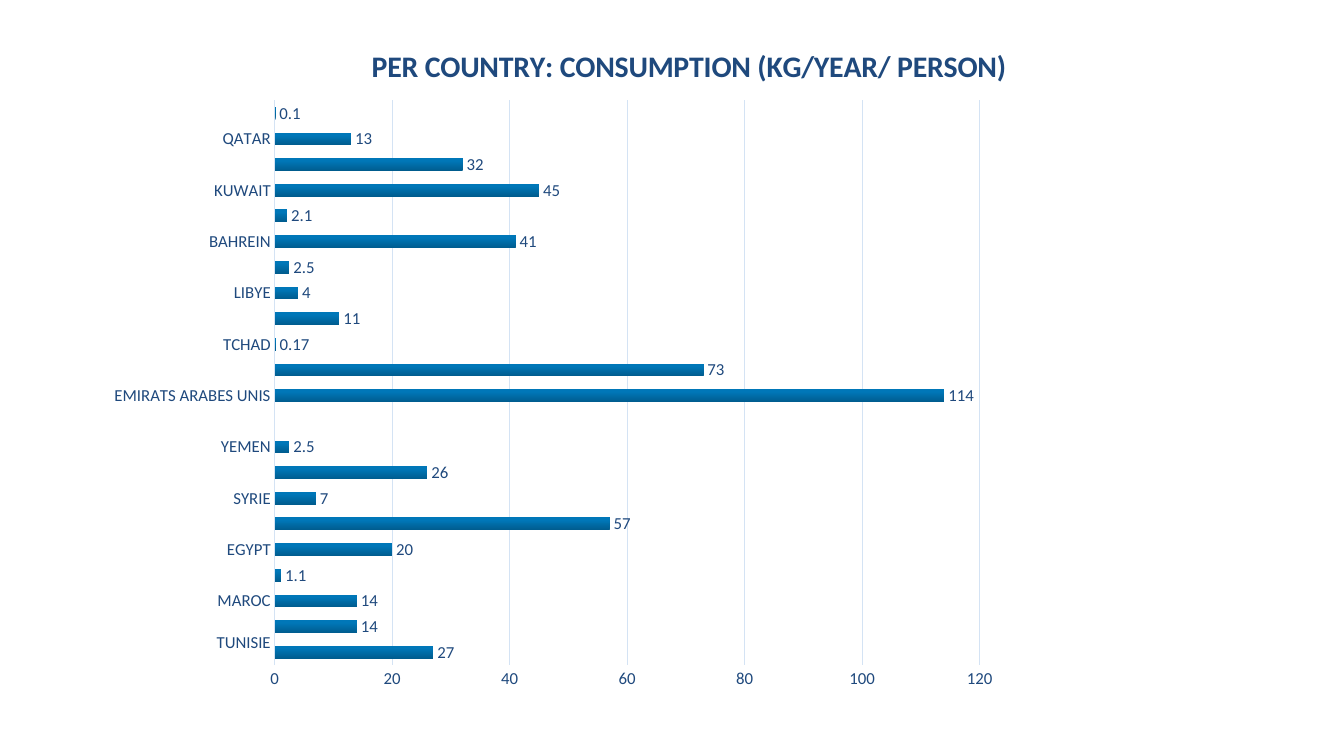
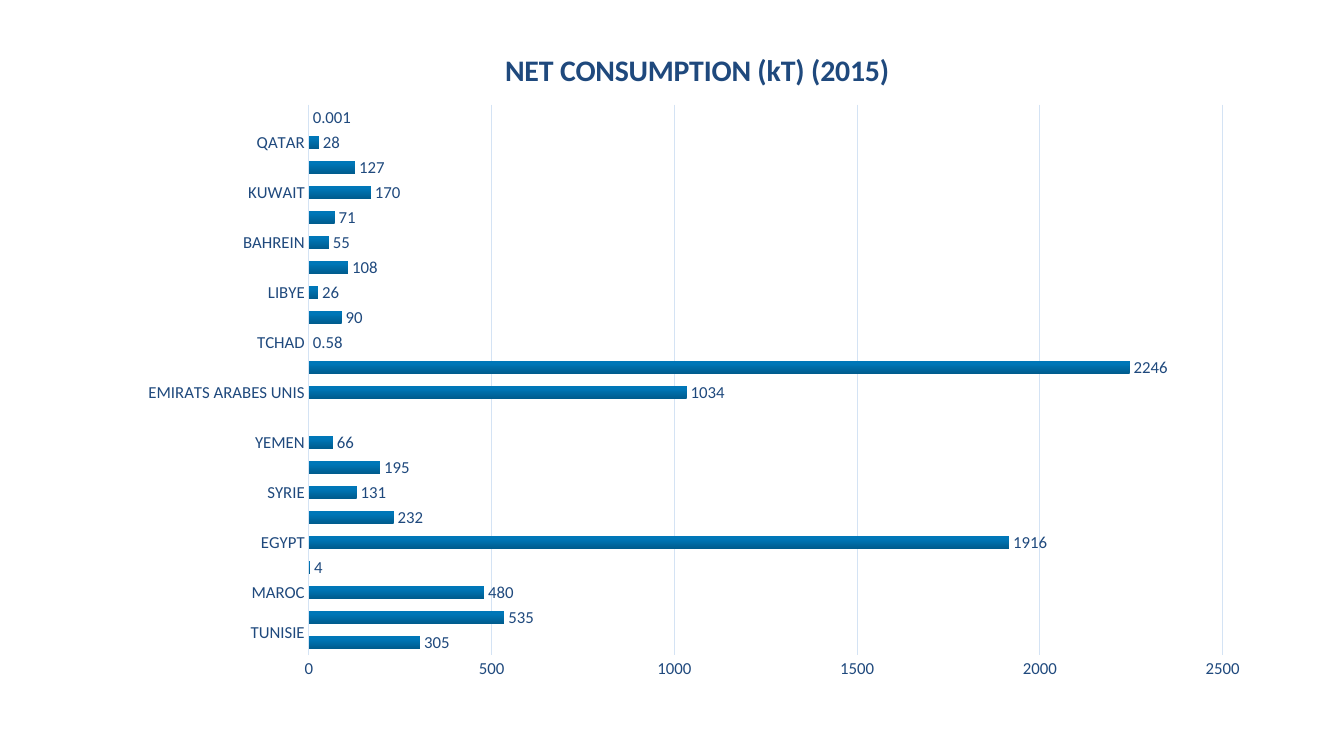
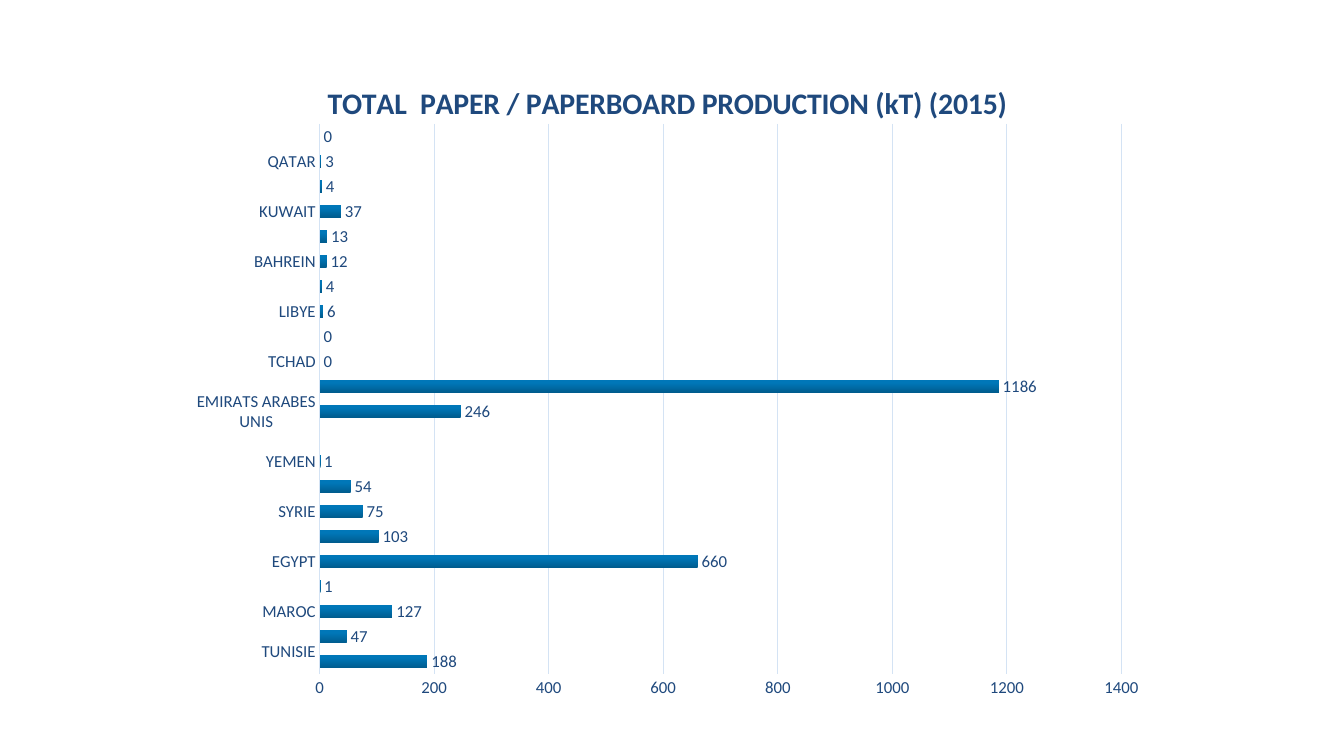
"""Build three bar-chart slides on paper consumption and production by country."""
from lxml.etree import SubElement
from pptx import Presentation
from pptx.chart.data import CategoryChartData
from pptx.dml.color import RGBColor
from pptx.enum.chart import XL_CHART_TYPE, XL_LABEL_POSITION, XL_TICK_MARK
from pptx.oxml import parse_xml
from pptx.oxml.ns import nsdecls, qn
from pptx.util import Inches, Pt

FONT = "Calibri"
COLORS = {"text": "1F497D", "grid": "D4E3F4"}
BAR_STOPS = [(0, "005C8E"), (80, "0077B8"), (100, "0078B9")]
COUNTRIES = [
    "TUNISIE\n", "MAROC", "EGYPT", "SYRIE", "YEMEN", "EMIRATS ARABES UNIS",
    "TCHAD", "LIBYE", "BAHREIN", "KUWAIT", "QATAR",
]
UNLABELLED = " "
CHARTS = [
    {
        "title": "PER COUNTRY: CONSUMPTION (KG/YEAR/ PERSON)",
        "title_place": {"x": 0.29, "y": 0.01},
        "box": (1, 0.33, 9.08, 6.67),
        "plot": (0.19, 0.1, 0.77, 0.84),
        "maximum": 120, "step": 20,
        "values": [27, 14, 14, 1.1, 20, 57, 7, 26, 2.5, None, 114, 73, 0.17, 11,
                   4, 2.5, 41, 2.1, 45, 32, 13, 0.1],
    },
    {
        "title": "NET CONSUMPTION (kT) (2015)",
        "title_place": None,
        "box": (1.25, 0.25, 11.33, 6.58),
        "plot": (0.16, 0.12, 0.8, 0.83),
        "maximum": 2500, "step": 500,
        "values": [305, 535, 480, 4, 1916, 232, 131, 195, 66, None, 1034, 2246,
                   0.58, 90, 26, 108, 55, 71, 170, 127, 28, 0.001],
    },
    {
        "title": "TOTAL  PAPER / PAPERBOARD PRODUCTION (kT) (2015)",
        "title_place": None,
        "box": (1.83, 0.58, 9.58, 6.5),
        "plot": (0.14, 0.1, 0.83, 0.84),
        "maximum": 1400, "step": 200,
        "values": [188, 47, 127, 1, 660, 103, 75, 54, 1, None, 246, 1186, 0, 0,
                   6, 4, 12, 13, 37, 4, 3, 0],
    },
]


def color(name):
    return RGBColor.from_string(COLORS[name])


def style_font(font, size, bold=False):
    font.name = FONT
    font.size = Pt(size)
    font.bold = bold
    font.color.rgb = color("text")


def style_line(line):
    line.color.rgb = color("grid")
    line.width = Pt(0.75)


def set_layout(element, position, places, inner=False):
    for old in element.findall(qn("c:layout")):
        element.remove(old)
    layout = parse_xml(f"<c:layout {nsdecls('c')}><c:manualLayout/></c:layout>")
    settings = {"layoutTarget": "inner"} if inner else {}
    settings.update({f"{side}Mode": "edge" for side in ("x", "y")})
    settings.update(places)
    for tag, value in settings.items():
        SubElement(layout[0], qn(f"c:{tag}")).set("val", str(value))
    element.insert(position, layout)


def fill_bars(series):
    stops = "".join(
        f'<a:gs pos="{percent * 1000}"><a:srgbClr val="{value}"/></a:gs>'
        for percent, value in BAR_STOPS
    )
    gradient = parse_xml(
        f"<a:gradFill {nsdecls('a')}><a:gsLst>{stops}</a:gsLst>"
        '<a:lin ang="16200000" scaled="0"/></a:gradFill>'
    )
    series.format.fill.solid()
    solid = series.format.fill._xPr.find(qn("a:solidFill"))
    solid.getparent().replace(solid, gradient)


def add_bar_chart(slide, content):
    data = CategoryChartData()
    data.categories = [label for name in COUNTRIES for label in (name, UNLABELLED)]
    data.add_series("Series 1", content["values"])
    chart = slide.shapes.add_chart(
        XL_CHART_TYPE.BAR_CLUSTERED, *map(Inches, content["box"]), data
    ).chart
    chart.has_legend = False
    chart.font.name = FONT
    chart.font.size = Pt(10)

    chart.has_title = True
    run = chart.chart_title.text_frame.paragraphs[0].add_run()
    run.text = content["title"]
    style_font(run.font, 21.3, bold=True)
    chart_element = chart._chartSpace.chart
    if content["title_place"]:
        set_layout(chart_element.find(qn("c:title")), 1, content["title_place"])
    set_layout(chart_element.plotArea, 0, dict(zip("xywh", content["plot"])), True)

    for axis in (chart.category_axis, chart.value_axis):
        axis.major_tick_mark = axis.minor_tick_mark = XL_TICK_MARK.NONE
        style_font(axis.tick_labels.font, 12)
    style_line(chart.category_axis.format.line)
    values = chart.value_axis
    values.format.line.fill.background()
    values.minimum_scale = 0
    values.maximum_scale = content["maximum"]
    values.major_unit = content["step"]
    values.has_major_gridlines = True
    style_line(values.major_gridlines.format.line)

    plot = chart.plots[0]
    plot.gap_width = 100
    plot.vary_by_categories = False
    fill_bars(plot.series[0])
    plot.has_data_labels = True
    labels = plot.data_labels
    labels.show_value = True
    labels.position = XL_LABEL_POSITION.OUTSIDE_END
    style_font(labels.font, 12)


def main():
    presentation = Presentation()
    presentation.slide_width = Inches(13.33)
    presentation.slide_height = Inches(7.5)
    for content in CHARTS:
        slide = presentation.slides.add_slide(presentation.slide_layouts[6])
        add_bar_chart(slide, content)
    presentation.save("out.pptx")


if __name__ == "__main__":
    main()
